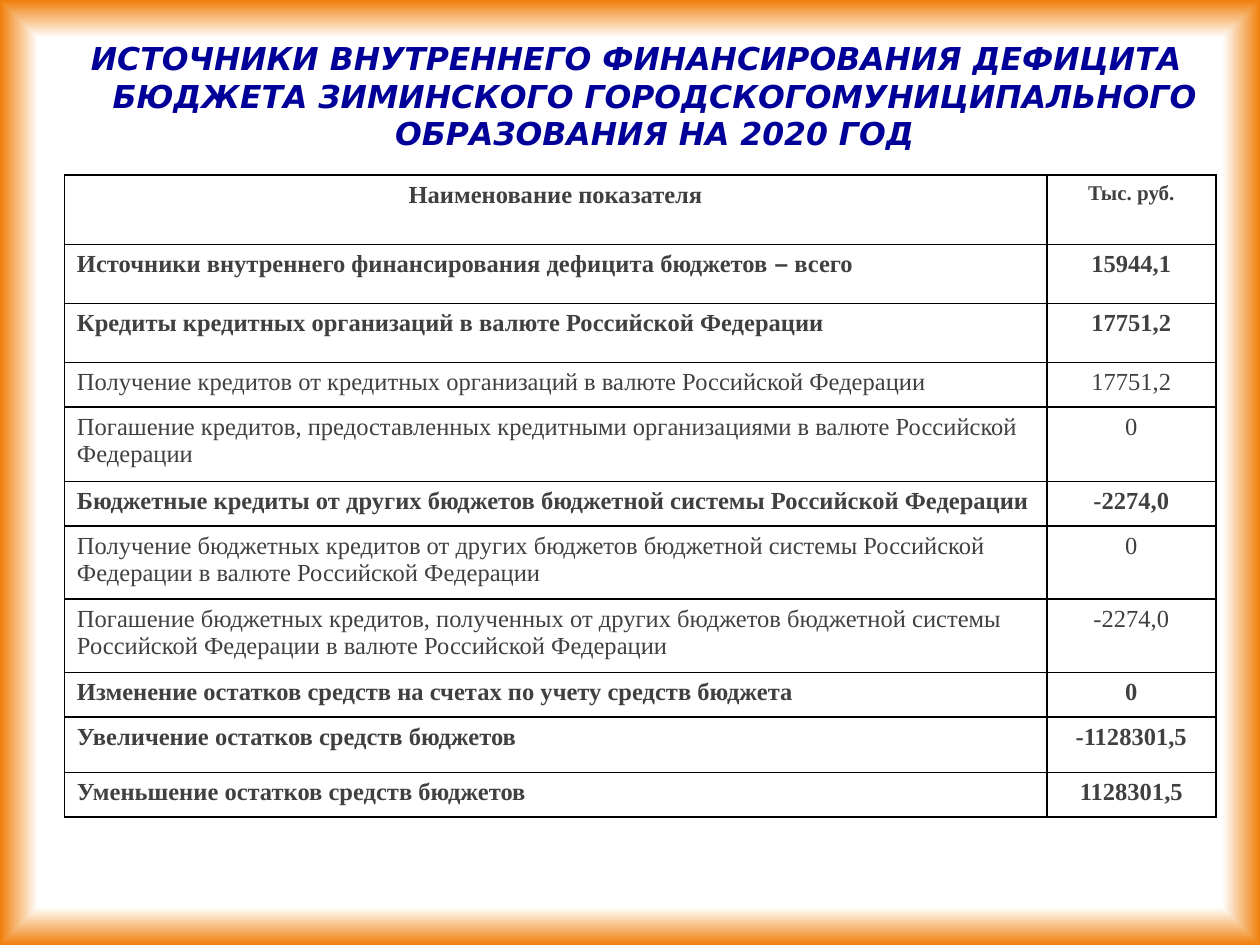
from dataclasses import dataclass

from pptx import Presentation
from pptx.dml.color import RGBColor
from pptx.enum.text import MSO_ANCHOR, MSO_AUTO_SIZE, PP_ALIGN
from pptx.oxml import parse_xml
from pptx.oxml.ns import nsdecls, qn
from pptx.util import Pt


@dataclass(frozen=True)
class Theme:
    paper: str = "FFFFFF"
    edge: str = "F07F09"
    title: str = "000099"
    text: str = "404040"
    border: str = "000000"
    title_font: str = "DejaVu Sans"
    table_font: str = "Times New Roman"
    dash_font: str = "Arial"
    title_size: int = 18
    table_size: int = 14
    unit_size: int = 12


theme = Theme()


def add_span(para, text, font, size, color, bold, italic=False):
    span = para.add_run()
    span.text = text
    span.font.name = font
    span.font.size = Pt(size)
    span.font.color.rgb = RGBColor.from_string(color)
    span.font.bold = bold
    span.font.italic = italic


def set_borders(cell):
    properties = cell._tc.get_or_add_tcPr()
    for position, side in enumerate(("lnL", "lnR", "lnT", "lnB")):
        properties.insert(position, parse_xml(
            f'<a:{side} {nsdecls("a")} w="{Pt(1)}"><a:solidFill>'
            f'<a:srgbClr val="{theme.border}"/></a:solidFill></a:{side}>'))


deck = Presentation()
deck.slide_width, deck.slide_height = Pt(720), Pt(540)
page = deck.slides.add_slide(deck.slide_layouts[5])

# Background: white centre fading to an orange edge
page.background.fill.gradient()
gradient = page.element.find(".//" + qn("a:gradFill"))
stops = "".join(
    f'<a:gs pos="{percent * 1000}"><a:srgbClr val="{color}"/></a:gs>'
    for percent, color in ((0, theme.paper), (92, theme.paper), (100, theme.edge)))
gradient.getparent().replace(gradient, parse_xml(
    f'<a:gradFill {nsdecls("a")} rotWithShape="1"><a:gsLst>{stops}</a:gsLst>'
    '<a:path path="shape"><a:fillToRect l="50000" t="50000" r="50000" b="50000"/>'
    '</a:path></a:gradFill>'))

# Title
title = page.shapes.title
title.left, title.top, title.width, title.height = Pt(0), Pt(15), Pt(720), Pt(79)
frame = title.text_frame
frame.word_wrap = True
frame.auto_size = MSO_AUTO_SIZE.NONE
frame.vertical_anchor = MSO_ANCHOR.TOP
frame.margin_left, frame.margin_top = Pt(14.4), Pt(7.2)
frame.margin_right, frame.margin_bottom = Pt(7.2), Pt(3.6)
para = frame.paragraphs[0]
para.alignment = PP_ALIGN.CENTER
para.space_before = Pt(2.5)
indents = para._p.get_or_add_pPr()
indents.set("marL", str(Pt(21)))
indents.set("indent", str(Pt(-21)))
add_span(para, "ИСТОЧНИКИ ВНУТРЕННЕГО ФИНАНСИРОВАНИЯ ДЕФИЦИТА БЮДЖЕТА ЗИМИНСКОГО "
         "ГОРОДСКОГОМУНИЦИПАЛЬНОГО ОБРАЗОВАНИЯ НА 2020 ГОД",
         theme.title_font, theme.title_size, theme.title, True, True)

# Table: row height, bold, indicator, amount
rows = [
    (39.6, True, "Наименование показателя", "Тыс. руб."),
    (33.8, True, "Источники внутреннего финансирования дефицита бюджетов – всего", "15944,1"),
    (33.8, True, "Кредиты кредитных организаций в валюте Российской Федерации", "17751,2"),
    (25.5, False, "Получение кредитов от кредитных организаций в валюте Российской Федерации",
     "17751,2"),
    (42.5, False, "Погашение кредитов, предоставленных кредитными организациями в валюте "
     "Российской Федерации", "0"),
    (25.5, True, "Бюджетные кредиты от других бюджетов бюджетной системы Российской Федерации",
     "-2274,0"),
    (41.8, False, "Получение бюджетных кредитов от других бюджетов бюджетной системы "
     "Российской Федерации в валюте Российской Федерации", "0"),
    (41.8, False, "Погашение бюджетных кредитов, полученных от других бюджетов бюджетной "
     "системы Российской Федерации в валюте Российской Федерации", "-2274,0"),
    (25.6, True, "Изменение остатков средств на счетах по учету средств бюджета", "0"),
    (31.7, True, "Увеличение остатков средств бюджетов", "-1128301,5"),
    (25.5, True, "Уменьшение остатков средств бюджетов", "1128301,5"),
]
column_widths = (561.4, 96.6)
table = page.shapes.add_table(
    len(rows), len(column_widths), Pt(36.8), Pt(100),
    Pt(sum(column_widths)), Pt(sum(row[0] for row in rows))).table
table.first_row = False
table.horz_banding = False
for column, width in zip(table.columns, column_widths):
    column.width = Pt(width)

for row_index, (height, bold, *texts) in enumerate(rows):
    table.rows[row_index].height = Pt(height)
    for column_index, text in enumerate(texts):
        cell = table.cell(row_index, column_index)
        cell.fill.background()
        set_borders(cell)
        para = cell.text_frame.paragraphs[0]
        centred = row_index == 0 or column_index == 1
        para.alignment = PP_ALIGN.CENTER if centred else PP_ALIGN.LEFT
        is_unit = row_index == 0 and column_index == 1
        size = theme.unit_size if is_unit else theme.table_size
        before, dash, after = text.partition("–")
        for part, font in ((before, theme.table_font), (dash, theme.dash_font),
                           (after, theme.table_font)):
            if part:
                add_span(para, part, font, size, theme.text, bold)

deck.save("out.pptx")
